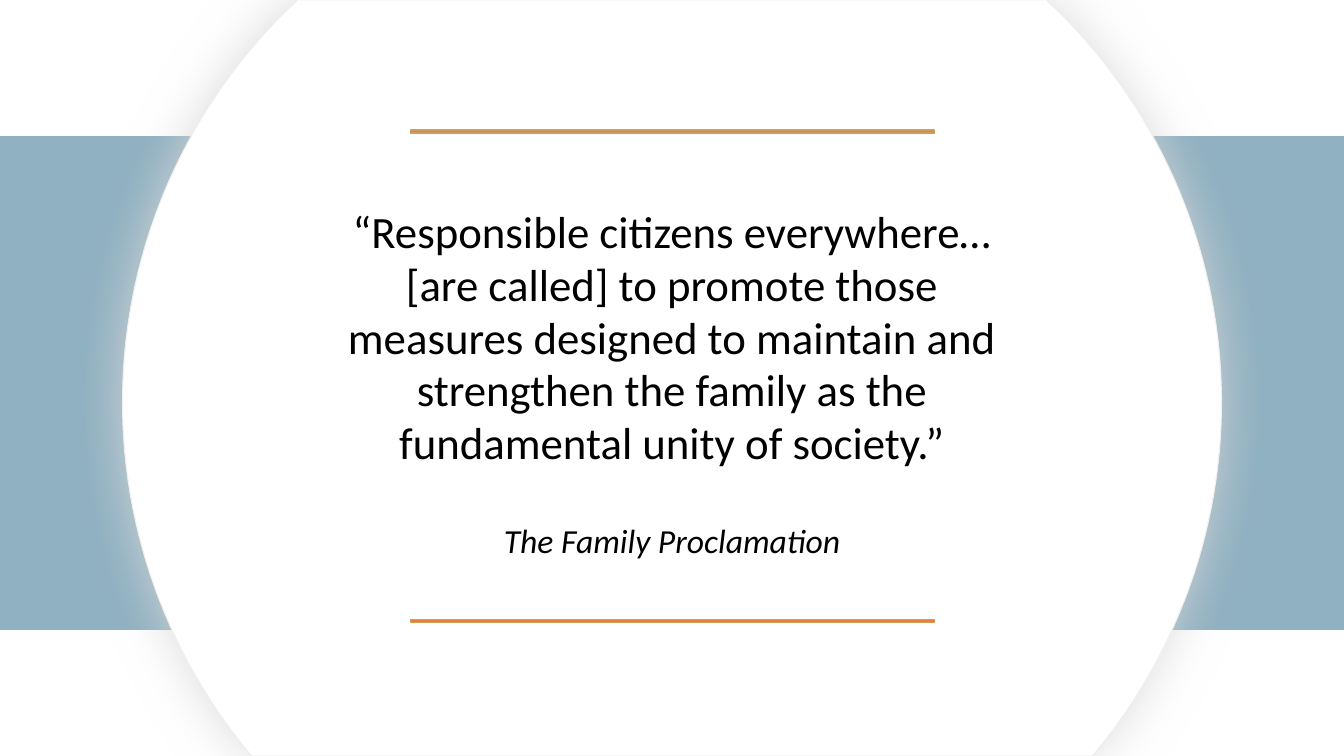
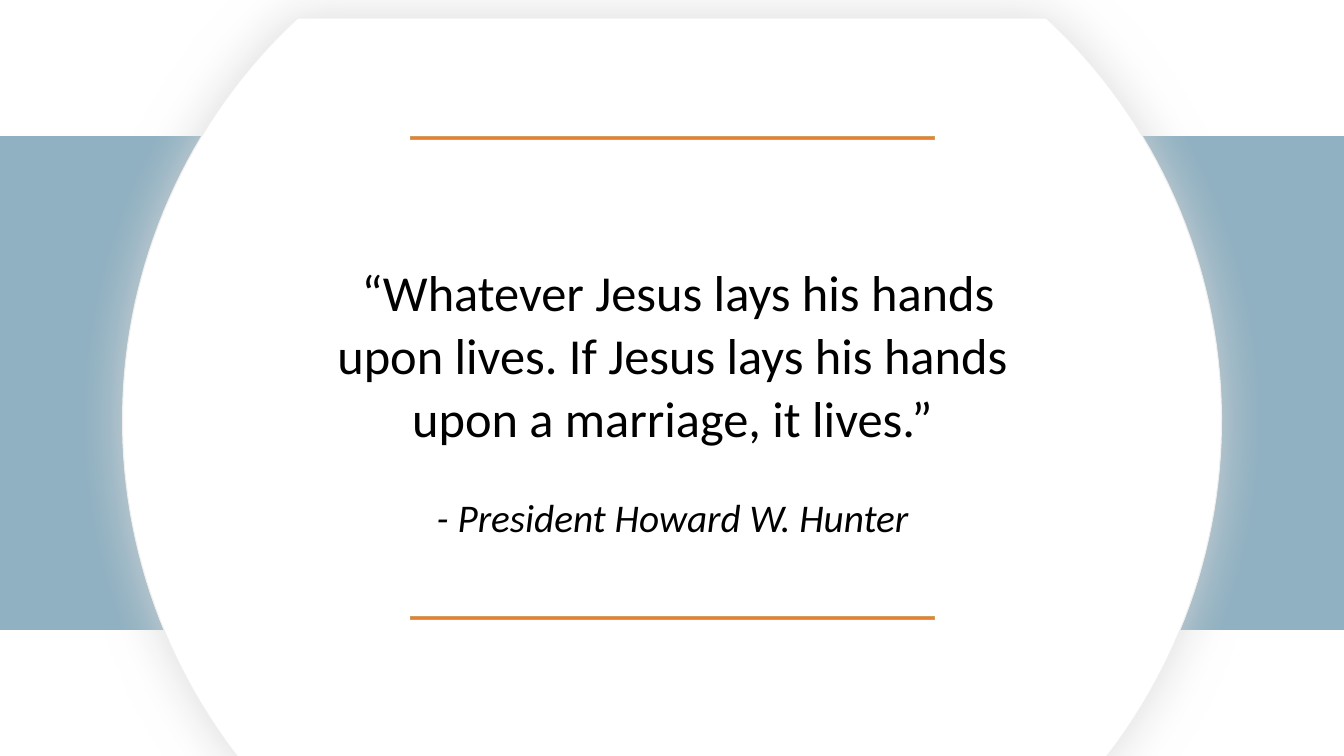
from math import asin, cos, sin

from lxml.etree import SubElement
from pptx import Presentation
from pptx.dml.color import RGBColor
from pptx.enum.shapes import MSO_SHAPE
from pptx.enum.text import MSO_ANCHOR, MSO_AUTO_SIZE, PP_ALIGN
from pptx.oxml.ns import qn
from pptx.util import Inches, Pt


class Deck:
    """Holds the quote style and the slide being built."""

    font = "Calibri"
    wide, high = 13.33, 7.5
    hues = {
        "band": "90B1C2",
        "disc": "FFFFFF",
        "rim": "EFEFEF",
        "glow": "D8D8D8",
        "rule": "ED7D31",
        "edge": "D09D5C",
        "text": "000000",
    }

    def __init__(self):
        self.deck = Presentation()
        self.deck.slide_width = Inches(self.wide)
        self.deck.slide_height = Inches(self.high)
        self.slide = None

    def hue(self, name):
        return RGBColor.from_string(self.hues[name])

    def paint(self, shape, fill, line):
        shape.shadow.inherit = False
        shape.fill.solid()
        shape.fill.fore_color.rgb = self.hue(fill)
        shape.line.color.rgb = self.hue(line)
        shape.line.width = Pt(0.75)

    def bar(self, left, top, width, height, fill, line):
        shape = self.slide.shapes.add_shape(
            MSO_SHAPE.RECTANGLE,
            Inches(left), Inches(top), Inches(width), Inches(height))
        self.paint(shape, fill, line)

    def disc(self, top, radius=5.45, drop=3.99, steps=60):
        first = asin(-drop / radius)
        last = asin((self.high - drop) / radius)
        turns = [first + (last - first) * i / steps for i in range(steps + 1)]
        right = [(radius * cos(t), radius * sin(t)) for t in turns]
        left = [(-x, y) for x, y in reversed(right)]
        points = [(Inches(self.wide / 2 + x), Inches(top + drop + y))
                  for x, y in right + left]
        pen = self.slide.shapes.build_freeform(*points[0])
        pen.add_line_segments(points[1:], close=True)
        shape = pen.convert_to_shape()
        self.paint(shape, "disc", "rim")
        self.glow(shape)

    def glow(self, shape):
        effects = shape.element.spPr.find(qn("a:effectLst"))
        shadow = SubElement(effects, qn("a:outerShdw"), blurRad=str(Pt(37)),
                            dist="0", dir="0", algn="ctr", rotWithShape="0")
        tint = SubElement(shadow, qn("a:srgbClr"), val=self.hues["glow"])
        SubElement(tint, qn("a:alpha"), val="89000")

    def quote(self, box, anchor, words, source, sizes, gap, pitch):
        title = self.slide.shapes.title
        title.left, title.top, title.width, title.height = map(Inches, box)
        title.element.getparent().append(title.element)
        frame = title.text_frame
        frame.word_wrap = True
        frame.auto_size = MSO_AUTO_SIZE.NONE
        frame.vertical_anchor = anchor
        frame.text = f"{words}\n{source}"
        for para, size in zip(frame.paragraphs, sizes):
            para.alignment = PP_ALIGN.CENTER
            para.line_spacing = pitch
            para.font.name = self.font
            para.font.size = Pt(size)
            para.font.color.rgb = self.hue("text")
        credit = frame.paragraphs[-1]
        credit.space_before = Pt(gap)
        credit.font.italic = True

    def page(self, top, rules, **quote):
        self.slide = self.deck.slides.add_slide(self.deck.slide_layouts[5])
        self.bar(0, 1.35, self.wide, 4.9, "band", "band")
        self.disc(top)
        for level in rules:
            self.bar(4.07, level, 5.2, 0.03, "rule", "edge")
        self.quote(**quote)


def main():
    deck = Deck()
    deck.page(
        top=0, rules=(1.29, 6.15),
        box=(3.19, 1.98, 6.95, 3.64), anchor=MSO_ANCHOR.BOTTOM,
        words="“Responsible citizens everywhere… [are called] to promote "
              "those measures designed to maintain and strengthen the family "
              "as the fundamental unity of society.”",
        source="The Family Proclamation",
        sizes=(32, 24), gap=37, pitch=0.98)
    deck.page(
        top=0.18, rules=(1.35, 6.12),
        box=(2.92, 2.15, 7.5, 3.63), anchor=MSO_ANCHOR.MIDDLE,
        words=" “Whatever Jesus lays his hands upon lives. "
              "If Jesus lays his hands upon a marriage, it lives.”",
        source="- President Howard W. Hunter",
        sizes=(36, 28), gap=31, pitch=1.04)
    deck.deck.save("out.pptx")


if __name__ == "__main__":
    main()
